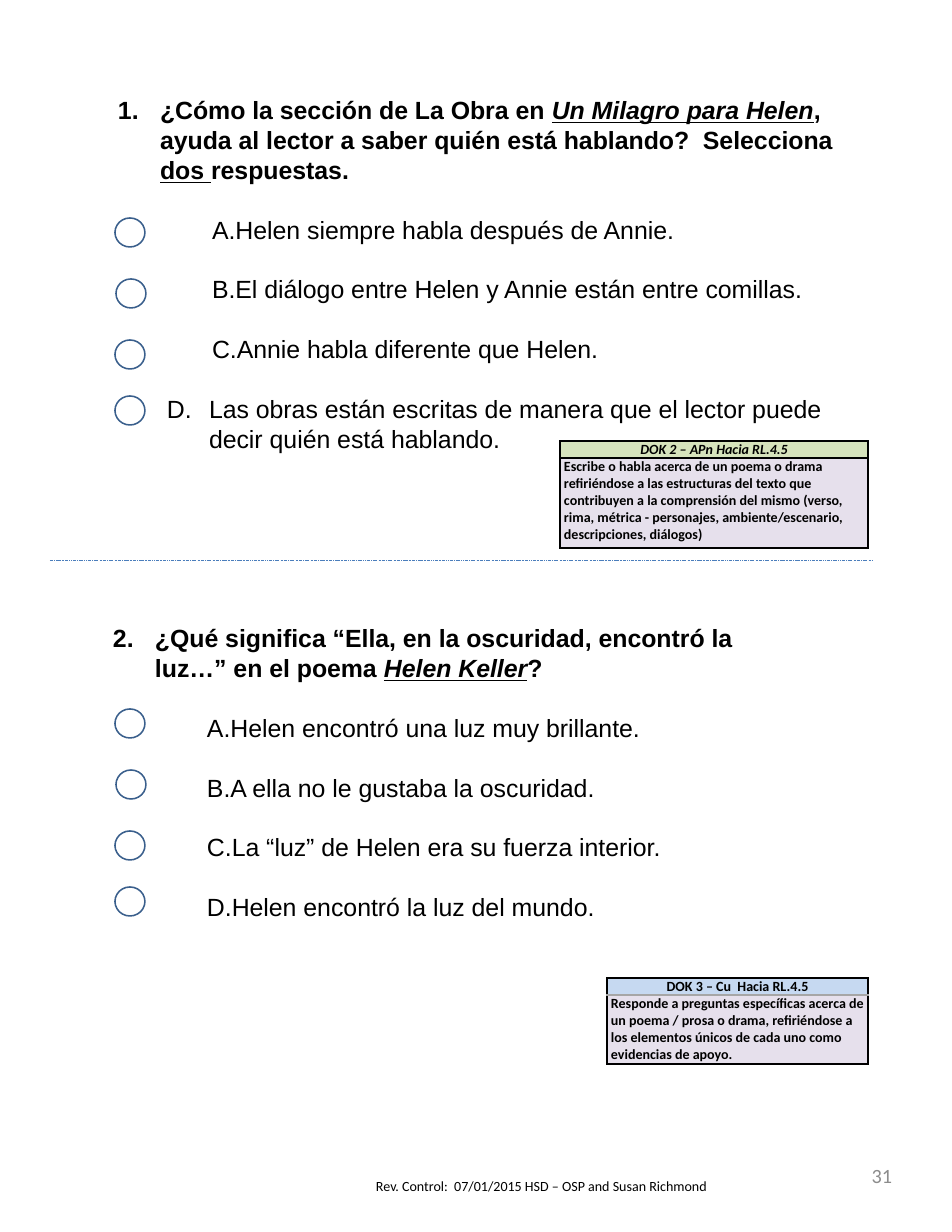
from lxml import etree
from pptx import Presentation
from pptx import util as u
from pptx.dml.color import RGBColor
from pptx.enum import dml, shapes, text
from pptx.oxml.ns import qn

PX = 914400 / 112
COLORS = {"ink": "000000", "circle": "3A5F8C", "divider": "4B7EBC", "green": "D6E3BC",
          "blue": "C6D9F1", "lilac": "E6E0EC", "gray": "A6A6A6", "number": "8C8C8C"}
LINE_HEIGHT = u.Pt(19.2)
CIRCLE_SIZE = (30, 29)
CIRCLE_OFFSETS = [(0, 0), (1, 61), (0, 122), (0, 178)]

QUESTIONS = [
    {"number": 1, "box": (106, 88, 788, 374), "circles": (115, 218),
     "prompt": [("¿Cómo la sección de La Obra en ", ""), ("Un Milagro para Helen", "iu"),
                (",  ayuda al lector a saber quién está hablando?  Selecciona ", ""),
                ("dos ", "u"), ("respuestas.", "")],
     "options": [("Helen siempre habla después de Annie.", (47, 47)),
                 ("El diálogo entre Helen y Annie están entre comillas.", (47, 47)),
                 ("Annie habla diferente que Helen.", (47, 47)),
                 ("Las obras están escritas de manera que el lector puede decir quién está hablando.",
                  (91, -42))]},
    {"number": 2, "box": (101, 616, 704, 315), "circles": (115, 709),
     "prompt": [("¿Qué significa “Ella, en la oscuridad, encontró la luz…” en el poema ", ""),
                ("Helen Keller", "iu"), ("?", "")],
     "options": [("Helen encontró una luz muy brillante.", (47, 47)),
                 ("A ella no le gustaba la oscuridad.", (47, 47)),
                 ("La “luz” de Helen era su fuerza interior.", (47, 47)),
                 ("Helen encontró la luz del mundo.", (47, 47))]},
]

STANDARDS = [
    {"at": (560, 441), "width": 308, "rows": (17, 90), "head_fill": "green", "italic": True,
     "middle": "ink", "head": "DOK 2 – APn Hacia RL.4.5",
     "body": "Escribe o habla acerca de un poema o drama refiriéndose a las estructuras del texto "
             "que contribuyen a la comprensión del mismo (verso, rima, métrica - personajes, "
             "ambiente/escenario, descripciones, diálogos)"},
    {"at": (607, 978), "width": 261, "rows": (17, 69), "head_fill": "blue", "italic": False,
     "middle": "gray", "head": "DOK 3 – Cu  Hacia RL.4.5",
     "body": "Responde a preguntas específicas acerca de un poema / prosa o drama, refiriéndose a "
             "los elementos únicos de cada uno como evidencias de apoyo."},
]

FOOTER = ("Rev. Control:  07/01/2015 HSD – OSP and Susan Richmond", (364, 1172, 476, 29))
PAGE_NUMBER = ("31", (682, 1142, 222, 66))
DIVIDER = (50, 560, 872, 560)


def px(*values):
    return [u.Emu(round(value * PX)) for value in values]


def color(name):
    return RGBColor.from_string(COLORS[name])


def style(span, size, font, ink="ink", bold=False, marks=""):
    span.font.size = u.Pt(size)
    span.font.name = font
    span.font.color.rgb = color(ink)
    span.font.bold = bold
    span.font.italic = "i" in marks
    span.font.underline = "u" in marks


def set_margins(target, side, end):
    target.margin_left, target.margin_right = px(side, side)
    target.margin_top, target.margin_bottom = px(end, end)


def add_box(page, at, side, end):
    frame = page.shapes.add_textbox(*px(*at)).text_frame
    frame.word_wrap = True
    set_margins(frame, side, end)
    return frame


def add_label(page, content, at, size, ink):
    frame = add_box(page, at, 12, 6)
    frame.text = content
    style(frame.paragraphs[0].runs[0], size, "Calibri", ink)
    return frame


def number_para(para, kind, margin, indent, start=1):
    props = para._p.get_or_add_pPr()
    left, first = px(margin, indent)
    props.set("marL", str(left))
    props.set("indent", str(first))
    font = etree.SubElement(props, qn("a:buFont"))
    font.set("typeface", "+mj-lt")
    bullet = etree.SubElement(props, qn("a:buAutoNum"))
    bullet.set("type", kind)
    if start > 1:
        bullet.set("startAt", str(start))
    para.line_spacing = LINE_HEIGHT


def add_question(page, question):
    frame = add_box(page, question["box"], 12, 7)
    para = frame.paragraphs[0]
    number_para(para, "arabicPeriod", 42, -42, question["number"])
    for content, marks in question["prompt"]:
        span = para.add_run()
        span.text = content
        style(span, 16, "Arial", bold=True, marks=marks)
    for content, (margin, indent) in question["options"]:
        para = frame.add_paragraph()
        para.text = content
        number_para(para, "alphaUcPeriod", margin, indent)
        para.space_before = LINE_HEIGHT
        style(para.runs[0], 16, "Arial")


def add_circles(page, left, top):
    group = page.shapes.add_group_shape()
    for dx, dy in CIRCLE_OFFSETS:
        circle = group.shapes.add_shape(shapes.MSO_SHAPE.OVAL,
                                        *px(left + dx, top + dy, *CIRCLE_SIZE))
        circle.shadow.inherit = False
        circle.fill.background()
        circle.line.color.rgb = color("circle")
        circle.line.width = u.Pt(1)


def set_borders(cell, top, bottom):
    props = cell._tc.get_or_add_tcPr()
    sides = [("L", "ink"), ("R", "ink"), ("T", top), ("B", bottom)]
    for place, (side, name) in enumerate(sides):
        line = etree.Element(qn("a:ln" + side), w=str(u.Pt(1)))
        fill = etree.SubElement(line, qn("a:solidFill"))
        etree.SubElement(fill, qn("a:srgbClr"), val=COLORS[name])
        props.insert(place, line)


def add_standard(page, standard):
    size = px(*standard["at"], standard["width"], sum(standard["rows"]))
    table = page.shapes.add_table(2, 1, *size).table
    table.first_row = table.horz_banding = False
    middle = standard["middle"]
    rows = [(standard["head"], standard["head_fill"], "ink", middle),
            (standard["body"], "lilac", middle, "ink")]
    for index, (content, fill, top, bottom) in enumerate(rows):
        table.rows[index].height = px(standard["rows"][index])[0]
        cell = table.cell(index, 0)
        cell.text_frame.text = content
        set_margins(cell, 4, 0)
        cell.fill.solid()
        cell.fill.fore_color.rgb = color(fill)
        set_borders(cell, top, bottom)
        marks = "i" if standard["italic"] and index == 0 else ""
        style(cell.text_frame.paragraphs[0].runs[0], 9, "Calibri", bold=True, marks=marks)
    head = table.cell(0, 0)
    head.vertical_anchor = text.MSO_ANCHOR.MIDDLE
    head.text_frame.paragraphs[0].alignment = text.PP_ALIGN.CENTER


def add_divider(page):
    line = page.shapes.add_connector(shapes.MSO_CONNECTOR.STRAIGHT, *px(*DIVIDER))
    line.line.color.rgb = color("divider")
    line.line.width = u.Pt(0.25)
    line.line.dash_style = dml.MSO_LINE.DASH_DOT_DOT
    etree.SubElement(line._element.spPr, qn("a:effectLst"))


def main():
    deck = Presentation()
    deck.slide_width, deck.slide_height = u.Inches(8.5), u.Inches(11)
    page = deck.slides.add_slide(deck.slide_layouts[6])
    add_label(page, *FOOTER, 9, "ink")
    add_divider(page)
    for question, standard in zip(QUESTIONS, STANDARDS):
        add_question(page, question)
        add_circles(page, *question["circles"])
        add_standard(page, standard)
    number = add_label(page, *PAGE_NUMBER, 13, "number")
    number.vertical_anchor = text.MSO_ANCHOR.MIDDLE
    number.paragraphs[0].alignment = text.PP_ALIGN.RIGHT
    deck.save("out.pptx")


if __name__ == "__main__":
    main()
